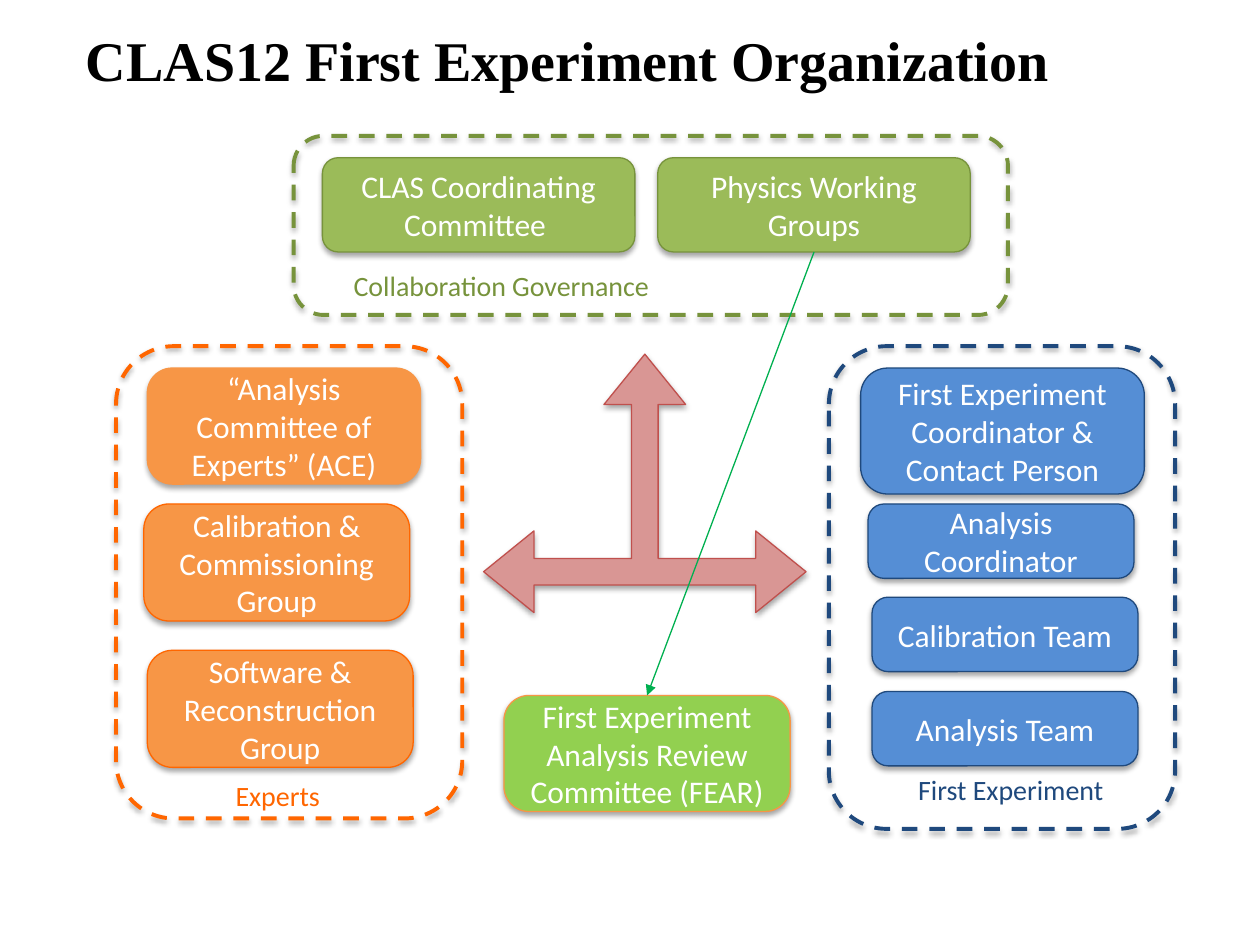
from dataclasses import dataclass

from lxml import etree
from pptx import Presentation
from pptx.dml.color import RGBColor
from pptx.enum.dml import MSO_LINE
from pptx.enum.shapes import MSO_CONNECTOR, MSO_SHAPE
from pptx.enum.text import MSO_ANCHOR, MSO_AUTO_SIZE, PP_ALIGN
from pptx.oxml import parse_xml
from pptx.oxml.ns import nsdecls, qn
from pptx.util import Cm, Pt

ROUNDED = MSO_SHAPE.ROUNDED_RECTANGLE
THREE_WAY_ARROW = MSO_SHAPE.LEFT_RIGHT_UP_ARROW
STRAIGHT = MSO_CONNECTOR.STRAIGHT
DASH = MSO_LINE.DASH
MIDDLE = MSO_ANCHOR.MIDDLE
CENTER = PP_ALIGN.CENTER
NO_AUTOFIT = MSO_AUTO_SIZE.NONE
FIT_SHAPE = MSO_AUTO_SIZE.SHAPE_TO_FIT_TEXT
BOTTOM_SITE, TOP_SITE = 2, 0


@dataclass(frozen=True)
class Theme:
    title_font: str = "Times New Roman"
    body_font: str = "Calibri"
    title_size: int = 32
    box_size: int = 18
    label_size: int = 16
    thin: float = 0.75
    thick: float = 2.25
    black: str = "000000"
    white: str = "FFFFFF"
    green: str = "9BBB59"
    dark_green: str = "77933C"
    blue: str = "558ED5"
    navy: str = "1F497D"
    orange: str = "F79646"
    dark_orange: str = "FF6600"
    lime: str = "92D050"
    pink: str = "D99694"
    red: str = "C0504D"
    link_green: str = "00B050"


THEME = Theme()

GROUPS = [
    {
        "frame": (5.92, 2.74, 14.4, 3.61),
        "label": ("Collaboration Governance", (6.88, 5.28, 6.55, 0.91)),
        "fill": THEME.green,
        "accent": THEME.dark_green,
        "rounding": 0.167,
        "boxes": [
            ("CLAS Coordinating Committee ", (6.5, 3.18, 6.3, 1.9)),
            ("Physics Working Groups", (13.26, 3.18, 6.3, 1.9)),
        ],
    },
    {
        "frame": (2.34, 6.98, 6.98, 9.52),
        "label": ("Experts", (4.5, 15.57, 2.21, 0.91)),
        "fill": THEME.orange,
        "accent": THEME.dark_orange,
        "rounding": 0.215,
        "boxes": [
            ("Calibration & Commissioning Group", (2.9, 10.16, 5.36, 2.36)),
            ("Software & Reconstruction\nGroup", (2.97, 13.11, 5.36, 2.36)),
        ],
    },
    {
        "frame": (16.71, 6.98, 6.98, 9.73),
        "label": ("First Experiment", (18.26, 15.44, 4.24, 0.91)),
        "fill": THEME.blue,
        "accent": THEME.navy,
        "rounding": 0.215,
        "boxes": [
            ("First Experiment Coordinator & Contact Person",
             (17.35, 7.42, 5.72, 2.54)),
            ("Analysis Coordinator", (17.5, 10.16, 5.36, 1.5)),
            ("Calibration Team", (17.58, 12.04, 5.36, 1.5)),
            ("Analysis Team", (17.58, 13.94, 5.36, 1.5)),
        ],
    },
]


def apply_format(target, values):
    for name, value in values.items():
        setattr(target, name, value)


def lengths(place):
    return [Cm(value) for value in place]


def write(frame, text, color, size, font=THEME.body_font, bold=False, align=None):
    frame.text = text
    for paragraph in frame.paragraphs:
        paragraph.alignment = align
        apply_format(paragraph.font, {"name": font, "size": Pt(size), "bold": bold})
        paragraph.font.color.rgb = RGBColor.from_string(color)


def add_soft_shadow(shape):
    shape.shadow.inherit = False
    effects = shape._element.spPr.find(qn("a:effectLst"))
    effects.append(parse_xml(
        f'<a:outerShdw {nsdecls("a")} blurRad="39400" dist="22900" '
        'dir="5400000" rotWithShape="0"><a:srgbClr val="000000">'
        '<a:alpha val="35000"/></a:srgbClr></a:outerShdw>'))


def add_outline(slide, kind, place, fill, line, width, adjustments):
    shape = slide.shapes.add_shape(kind, *lengths(place))
    for index, value in enumerate(adjustments):
        shape.adjustments[index] = value
    if fill:
        shape.fill.solid()
        shape.fill.fore_color.rgb = RGBColor.from_string(fill)
    else:
        shape.fill.background()
    shape.line.color.rgb = RGBColor.from_string(line)
    shape.line.width = Pt(width)
    add_soft_shadow(shape)
    return shape


def add_box(slide, text, place, fill, line, rounding):
    box = add_outline(slide, ROUNDED, place, fill, line, THEME.thin, [rounding])
    apply_format(box.text_frame, {"word_wrap": True, "vertical_anchor": MIDDLE})
    write(box.text_frame, text, THEME.white, THEME.box_size, align=CENTER)
    return box


def add_label(slide, text, place, color):
    label = slide.shapes.add_textbox(*lengths(place))
    apply_format(label.text_frame, {"word_wrap": False, "auto_size": FIT_SHAPE})
    write(label.text_frame, text, color, THEME.label_size)


def add_group(slide, group):
    accent = group["accent"]
    frame = add_outline(slide, ROUNDED, group["frame"], None, accent,
                        THEME.thick, [0.167])
    frame.line.dash_style = DASH
    add_label(slide, *group["label"], accent)
    return [add_box(slide, text, place, group["fill"], accent, group["rounding"])
            for text, place in group["boxes"]]


def add_link(slide, source, target):
    link = slide.shapes.add_connector(STRAIGHT, 0, 0, 0, 0)
    link.begin_connect(source, BOTTOM_SITE)
    link.end_connect(target, TOP_SITE)
    link.line.color.rgb = RGBColor.from_string(THEME.link_green)
    link.line.width = Pt(THEME.thin)
    etree.SubElement(link.line._get_or_add_ln(), qn("a:tailEnd"), type="triangle")
    etree.SubElement(link._element.spPr, qn("a:effectLst"))


def set_title(slide, text):
    title = slide.shapes.title
    left, top, width, height = lengths((-0.2, 0.64, 23.3, 1.09))
    apply_format(title, {"left": left, "top": top, "width": width, "height": height})
    apply_format(title.text_frame, {
        "margin_left": 0, "margin_right": 0, "margin_top": 0, "margin_bottom": 0,
        "word_wrap": True, "vertical_anchor": MIDDLE, "auto_size": NO_AUTOFIT})
    write(title.text_frame, text, THEME.black, THEME.title_size,
          THEME.title_font, True, CENTER)


def main():
    deck = Presentation()
    apply_format(deck, {"slide_width": Cm(25.4), "slide_height": Cm(19.05)})
    slide = deck.slides.add_slide(deck.slide_layouts.get_by_name("Title Only"))
    set_title(slide, "CLAS12 First Experiment Organization")
    governance, _, _ = [add_group(slide, group) for group in GROUPS]
    add_outline(slide, THREE_WAY_ARROW, (9.75, 7.14, 6.5, 5.21), THEME.pink,
                THEME.red, THEME.thin, [0.103, 0.158, 0.195])
    add_box(slide, "“Analysis Committee of Experts” (ACE)",
            (2.97, 7.42, 5.51, 2.34), THEME.orange, THEME.orange, 0.215)
    review = add_box(slide, "First Experiment Analysis Review Committee (FEAR)",
                     (10.16, 14.02, 5.77, 2.34), THEME.lime, THEME.orange, 0.215)
    add_link(slide, governance[1], review)
    deck.save("out.pptx")


if __name__ == "__main__":
    main()
